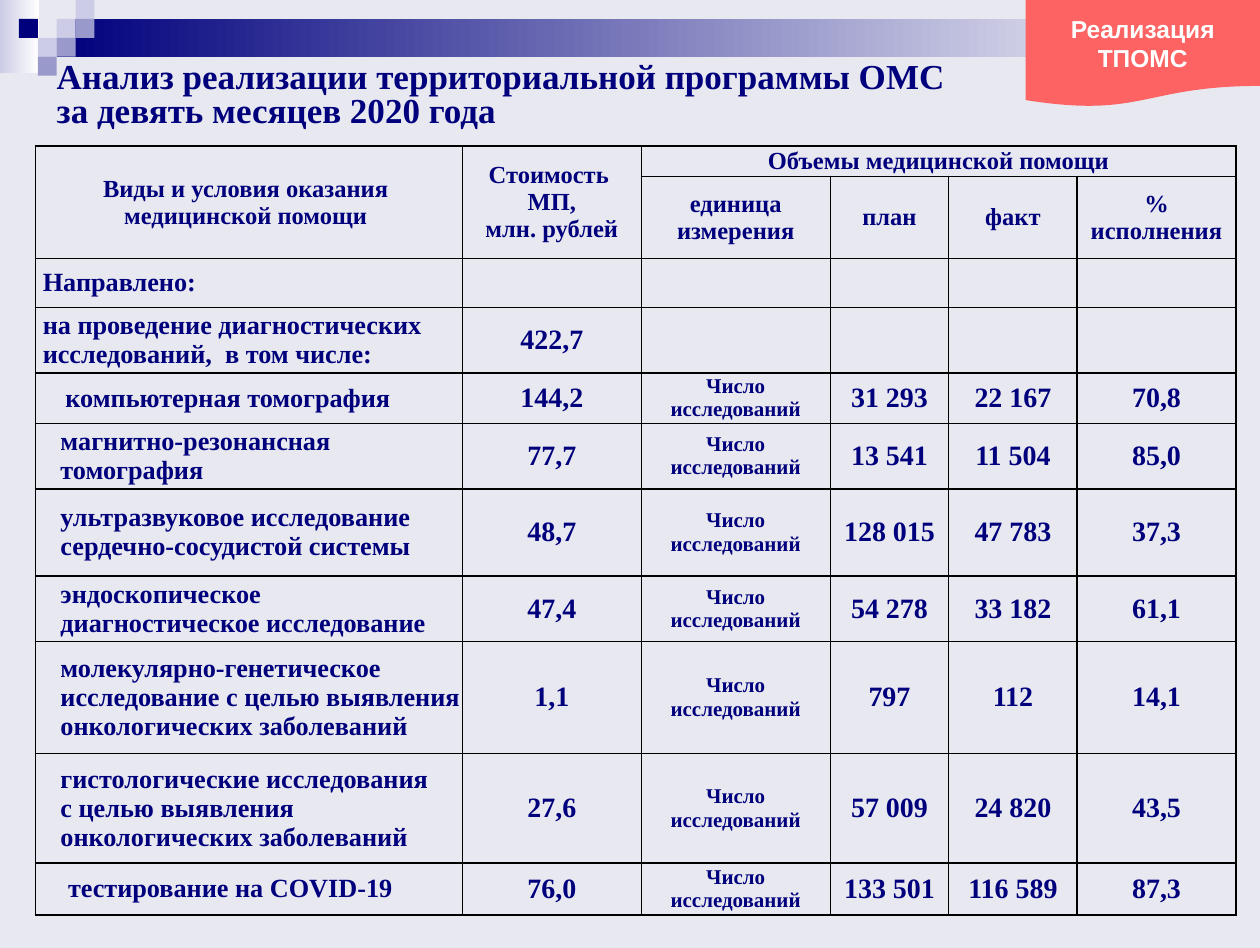
from dataclasses import dataclass
from lxml import etree
from pptx import Presentation
from pptx.dml.color import RGBColor
from pptx.enum.shapes import MSO_SHAPE
from pptx.enum.text import MSO_ANCHOR, MSO_AUTO_SIZE, PP_ALIGN
from pptx.oxml.ns import qn
from pptx.util import Inches, Pt

RECT, WAVE = MSO_SHAPE.RECTANGLE, MSO_SHAPE.FLOWCHART_DOCUMENT
LEFT, MID = PP_ALIGN.LEFT, PP_ALIGN.CENTER
CENTER = MSO_ANCHOR.MIDDLE


@dataclass(frozen=True)
class Theme:
    page: str = "E8E8F1"
    navy: str = "00007D"
    pale: str = "CCCCE6"
    lilac: str = "9999CC"
    coral: str = "FD6363"
    white: str = "FFFFFF"
    black: str = "000000"
    serif: str = "Times New Roman"
    sans: str = "Arial"
    title: int = 20
    head: int = 14
    label: int = 15
    value: int = 16
    unit: int = 12


T = Theme()
WIDE, HIGH = 10, 7.52
STEP = 0.15

TITLE = "Анализ реализации территориальной программы ОМС \vза девять месяцев 2020 года"
BADGE = "Реализация ТПОМС"
UNIT = "Число исследований"

HEADS = [
    (0, 0, 1, 0, "Виды и условия оказания \vмедицинской помощи "),
    (0, 1, 1, 1, "Стоимость  МП,\vмлн. рублей"),
    (0, 2, 0, 5, "Объемы медицинской помощи"),
    (1, 2, 1, 2, "единица измерения"),
    (1, 3, 1, 3, "план"),
    (1, 4, 1, 4, "факт"),
    (1, 5, 1, 5, "% исполнения"),
]
GROUPS = [
    ("Направлено:", "", "", "", "", ""),
    ("на проведение диагностических исследований,  в том числе:", "422,7", "", "", "", ""),
]
ITEMS = [
    ("компьютерная томография", "144,2", UNIT, "31 293", "22 167", "70,8"),
    ("магнитно-резонансная томография", "77,7", UNIT, "13 541", "11 504", "85,0"),
    ("ультразвуковое исследование \vсердечно-сосудистой системы", "48,7", UNIT,
     "128 015", "47 783", "37,3"),
    ("эндоскопическое диагностическое исследование", "47,4", UNIT,
     "54 278", "33 182", "61,1"),
    ("молекулярно-генетическое исследование с целью выявления онкологических заболеваний",
     "1,1", UNIT, "797", "112", "14,1"),
    ("гистологические исследования \vс целью выявления онкологических заболеваний",
     "27,6", UNIT, "57 009", "24 820", "43,5"),
    ("тестирование на COVID-19", "76,0", UNIT, "133 501", "116 589", "87,3"),
]
COLS = [3.39, 1.42, 1.5, 0.94, 1.02, 1.26]
ROWS = [0.24, 0.65, 0.39, 0.52, 0.4, 0.52, 0.69, 0.52, 0.89, 0.87, 0.41]
PADS = {4: 0.04, 10: 0.06}

BANDS = [
    ((0, 0, 0.31, 0.58), T.pale),
    ((3 * STEP, STEP, WIDE - 3 * STEP, 2 * STEP), T.navy),
]
TILES = [
    (3, 1, T.pale), (4, 0, T.pale), (4, 1, T.lilac), (2, 2, T.pale),
    (1, 1, T.navy), (3, 2, T.lilac), (2, 3, T.lilac),
]


def rgb(tone):
    return RGBColor.from_string(tone)


def style(para, size, tone=T.navy, face=T.serif, align=LEFT):
    font = para.font
    font.size, font.name, font.bold = Pt(size), face, True
    font.color.rgb = rgb(tone)
    para.alignment = align


def block(slide, kind, box, tone, fade=False):
    shape = slide.shapes.add_shape(kind, *map(Inches, box))
    shape.shadow.inherit = False
    shape.line.fill.background()
    fill = shape.fill
    if fade:
        fill.gradient()
        fill.gradient_angle = 0
        for stop, hue in zip(fill.gradient_stops, (tone, T.white)):
            stop.color.rgb = rgb(hue)
    else:
        fill.solid()
        fill.fore_color.rgb = rgb(tone)
    return shape


def edge(cell):
    prop = cell._tc.get_or_add_tcPr()
    for side in ("lnL", "lnR", "lnT", "lnB"):
        line = etree.SubElement(prop, qn("a:" + side), w=str(Pt(1)))
        fill = etree.SubElement(line, qn("a:solidFill"))
        etree.SubElement(fill, qn("a:srgbClr"), val=T.black)


def write(cell, text, size, align=MID, pad=0.06):
    cell.margin_left = cell.margin_right = Inches(pad)
    cell.text_frame.text = text
    style(cell.text_frame.paragraphs[0], size, align=align)


def add_title(slide):
    title = slide.shapes.title
    title.left, title.top, title.width, title.height = map(Inches, (0.35, 0.45, 9.45, 0.63))
    frame = title.text_frame
    frame.text = TITLE
    frame.auto_size = MSO_AUTO_SIZE.NONE
    frame.vertical_anchor = CENTER
    para = frame.paragraphs[0]
    style(para, T.title)
    para.line_spacing = 0.8
    slide.shapes._spTree.append(title._element)


def add_grid(slide):
    box = map(Inches, (0.28, 1.16, sum(COLS), sum(ROWS)))
    grid = slide.shapes.add_table(len(ROWS), len(COLS), *box).table
    grid.first_row = grid.horz_banding = False
    for col, size in zip(grid.columns, COLS):
        col.width = Inches(size)
    for row, size in zip(grid.rows, ROWS):
        row.height = Inches(size)
    for cell in grid.iter_cells():
        edge(cell)
        cell.fill.background()
        cell.vertical_anchor = CENTER
        cell.margin_top = cell.margin_bottom = 0
        write(cell, "", T.unit)
    for top, left, low, right, text in HEADS:
        cell = grid.cell(top, left)
        if (top, left) != (low, right):
            cell.merge(grid.cell(low, right))
        write(cell, text, T.head)
    start = 2 + len(GROUPS)
    for r, (label, *rest) in enumerate(GROUPS + ITEMS, 2):
        cell = grid.cell(r, 0)
        deep = r >= start
        write(cell, label, T.label, LEFT, PADS.get(r, 0) if deep else 0.06)
        if deep:
            para = cell.text_frame.paragraphs[0]
            para.space_before = Pt(6)
            para._p.get_or_add_pPr().set("marL", str(Inches(0.2)))
        for c, text in enumerate(rest, 1):
            write(grid.cell(r, c), text, T.unit if c == 2 else T.value)


def add_badge(slide):
    badge = block(slide, WAVE, (8.14, 0, 1.86, 0.85), T.coral)
    frame = badge.text_frame
    frame.word_wrap = True
    frame.vertical_anchor = CENTER
    frame.text = BADGE
    para = frame.paragraphs[0]
    style(para, T.head, T.white, T.sans, MID)
    para.space_before = Pt(3)


def main():
    deck = Presentation()
    deck.slide_width, deck.slide_height = Inches(WIDE), Inches(HIGH)
    slide = deck.slides.add_slide(deck.slide_layouts[5])
    back = slide.background.fill
    back.solid()
    back.fore_color.rgb = rgb(T.page)
    for box, tone in BANDS:
        block(slide, RECT, box, tone, True)
    for col, row, tone in TILES:
        block(slide, RECT, (col * STEP, row * STEP, STEP, STEP), tone)
    add_title(slide)
    add_grid(slide)
    add_badge(slide)
    deck.save("out.pptx")


if __name__ == "__main__":
    main()
